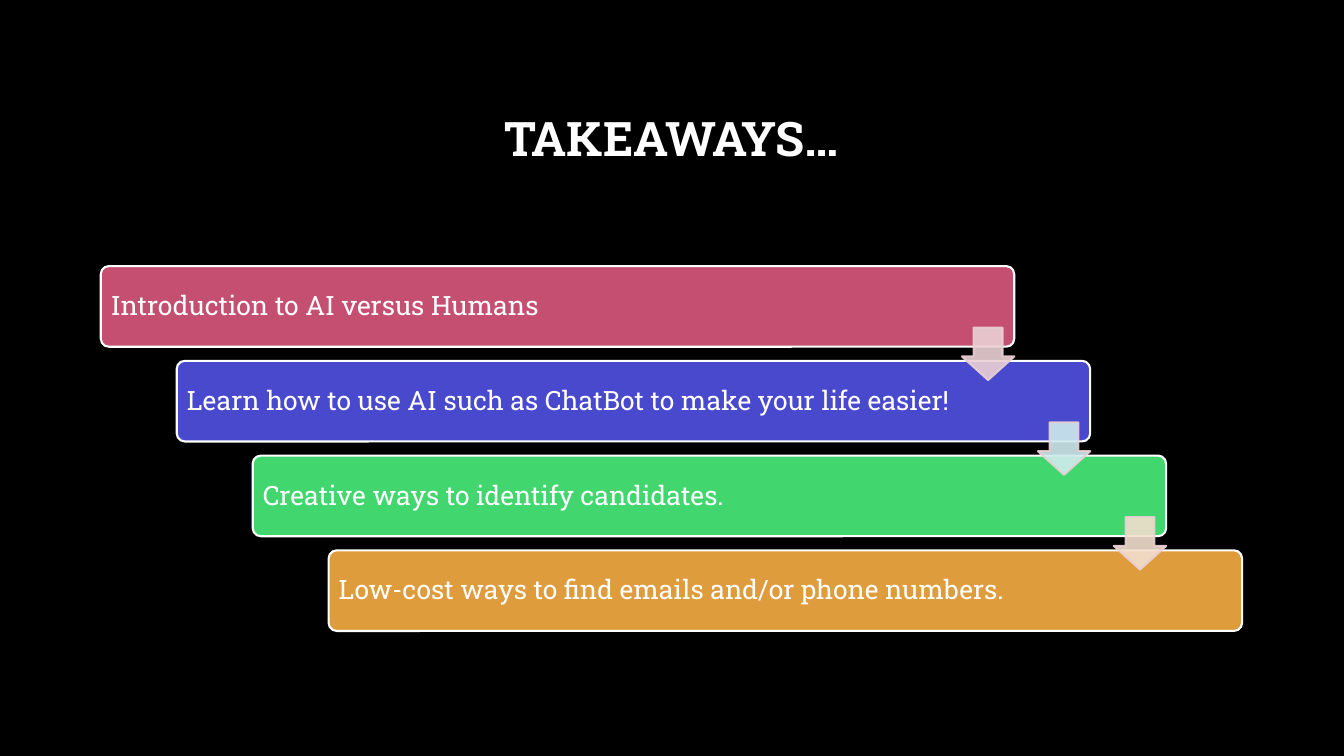
from lxml import etree
from pptx import Presentation
from pptx import util as u
from pptx.dml.color import RGBColor
from pptx.enum import shapes, text
from pptx.oxml.ns import qn

deck = Presentation()
deck.slide_width, deck.slide_height = u.Inches(13.33), u.Inches(7.5)
slide = deck.slides.add_slide(deck.slide_layouts[6])


def paint(fill, color, opacity=100):
    fill.solid()
    fill.fore_color.rgb = RGBColor.from_string(color)
    if opacity < 100:
        for tint in fill._xPr.iter(qn("a:srgbClr")):
            etree.SubElement(tint, qn("a:alpha"), val=str(opacity * 1000))


def write(words, left, top, width, height, size=19, bold=False, align="LEFT", inset=0.08):
    frame = slide.shapes.add_textbox(*map(u.Inches, (left, top, width, height))).text_frame
    frame.word_wrap = True
    frame.vertical_anchor = text.MSO_ANCHOR.MIDDLE
    frame.margin_left = frame.margin_right = u.Inches(inset)
    frame.margin_top = frame.margin_bottom = u.Inches(inset)
    line = frame.paragraphs[0]
    line.alignment = text.PP_ALIGN[align]
    line.line_spacing = 0.9
    run = line.add_run()
    run.text = words
    run.font.name, run.font.size, run.font.bold = "Roboto Slab", u.Pt(size), bold
    paint(run.font.fill, "FFFFFF")


paint(slide.background.fill, "000000")
write("TAKEAWAYS…", 1, 0.67, 11.32, 1.45, size=34, bold=True, align="CENTER", inset=0.1)

panel = slide.shapes.add_shape(
    shapes.MSO_SHAPE.RECTANGLE, 0, u.Inches(2.29), deck.slide_width, u.Inches(5.21))
panel.shadow.inherit = False
paint(panel.fill, "000000", 50)
panel.line.fill.background()

takeaways = [
    ("Introduction to AI versus Humans", "C54F71", 8.13),
    ("Learn how to use AI such as ChatBot to make your life easier!", "4949CD", 7.74),
    ("Creative ways to identify candidates.", "42D66E", 7.74),
    ("Low-cost ways to find emails and/or phone numbers.", "DE9C3C", 7.74),
]
first_left, first_top = 1, 2.64
step_right, step_down = 2.26 / 3, 0.94
bar_width, bar_height = 9.06, 0.8

for i, (takeaway, color, text_width) in enumerate(takeaways):
    left, top = first_left + i * step_right, first_top + i * step_down
    bar = slide.shapes.add_shape(
        shapes.MSO_SHAPE.ROUNDED_RECTANGLE,
        *map(u.Inches, (left, top, bar_width, bar_height)))
    bar.adjustments[0] = 0.1
    bar.shadow.inherit = False
    paint(bar.fill, color)
    paint(bar.line.fill, "FFFFFF")
    bar.line.width = u.Pt(1.5)
    write(takeaway, left + 0.02, top + 0.03, text_width, 0.75)

arrow_size = 0.52
for i, color in enumerate(["EAD0D5", "CFEAEE", "F2DECE"]):
    left = first_left + bar_width - arrow_size + i * step_right
    top = first_top + 0.61 + i * step_down
    arrow = slide.shapes.add_shape(
        shapes.MSO_SHAPE.DOWN_ARROW,
        *map(u.Inches, (left, top, arrow_size, arrow_size)))
    arrow.adjustments[0], arrow.adjustments[1] = 0.55, 0.45
    arrow.shadow.inherit = False
    paint(arrow.fill, color, 90)
    paint(arrow.line.fill, "EAD0D5", 90)
    arrow.line.width = u.Pt(1.5)

deck.save("out.pptx")
